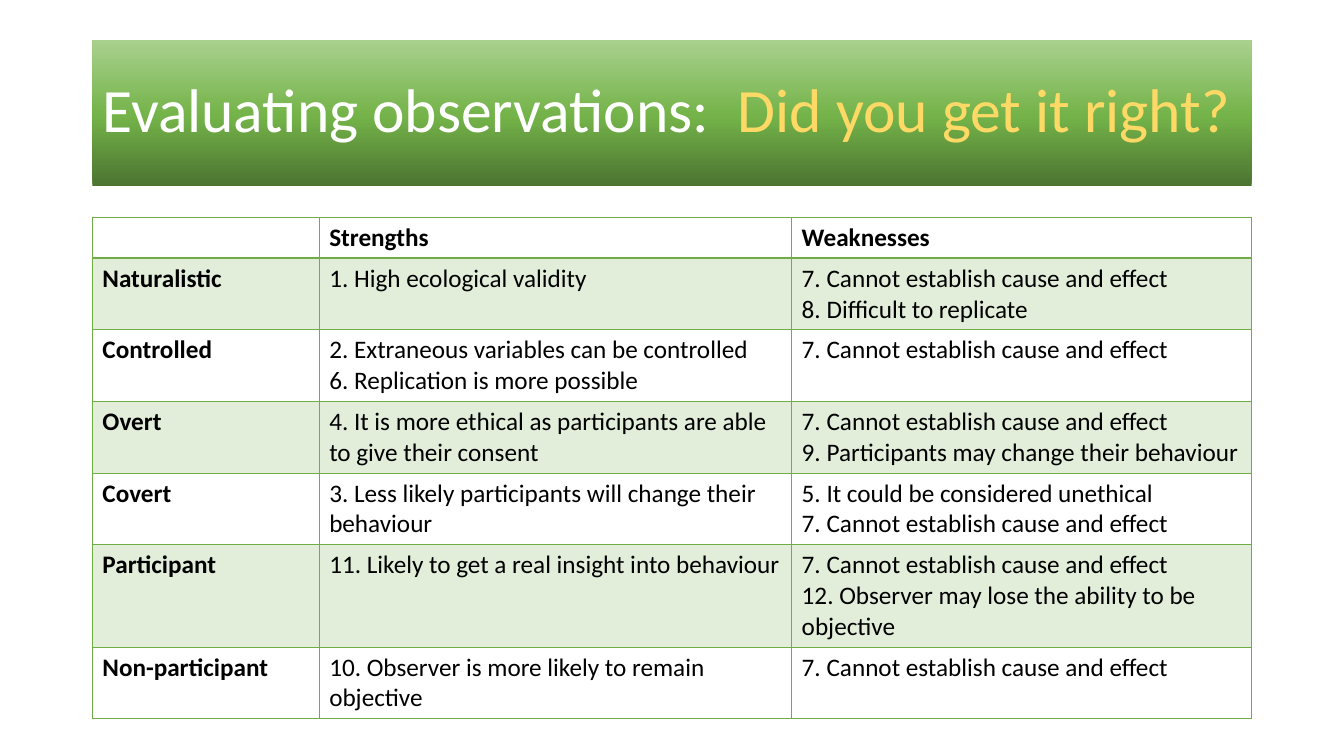
from copy import deepcopy

from lxml import etree
from pptx import Presentation
from pptx.dml.color import RGBColor
from pptx.enum.text import MSO_ANCHOR, MSO_AUTO_SIZE, PP_ALIGN
from pptx.oxml.ns import qn
from pptx.util import Pt

PX = 9525  # 96 px to the inch
FONT = "Calibri"
WHITE = RGBColor(0xFF, 0xFF, 0xFF)
BLACK = RGBColor(0x00, 0x00, 0x00)
YELLOW = RGBColor(0xFF, 0xD9, 0x66)
GREEN = RGBColor(0x70, 0xAD, 0x47)
BANNER_STOPS = [
    (0, RGBColor(0x4B, 0x74, 0x30)),
    (0.48, RGBColor(0x74, 0xB3, 0x49)),
    (1, RGBColor(0xA9, 0xD1, 0x8E)),
]
BAND_OPACITY = 20000

COLUMN_WIDTHS = [216, 450, 438]
FIRST_LINE, NEXT_LINE = 39, 29
NO_CAUSE = "7. Cannot establish cause and effect"
# Each row: text lines it takes, then its cells
EVALUATIONS = [
    (1, "", "Strengths", "Weaknesses"),
    (2, "Naturalistic", "1. High ecological validity",
     NO_CAUSE + "\n8. Difficult to replicate"),
    (2, "Controlled",
     "2. Extraneous variables can be controlled\n6. Replication is more possible",
     NO_CAUSE),
    (2, "Overt",
     "4. It is more ethical as participants are able to give their consent",
     NO_CAUSE + "\n9. Participants may change their behaviour"),
    (2, "Covert", "3. Less likely participants will change their behaviour",
     "5. It could be considered unethical\n" + NO_CAUSE),
    (3, "Participant", "11. Likely to get a real insight into behaviour",
     NO_CAUSE + "\n12. Observer may lose the ability to be objective"),
    (2, "Non-participant", "10. Observer is more likely to remain objective",
     NO_CAUSE),
]


def style_run(run, size, color, bold=False):
    run.font.name = FONT
    run.font.size = Pt(size)
    run.font.bold = bold
    run.font.color.rgb = color


def fill_banner(banner):
    banner.fill.gradient()
    banner.fill.gradient_angle = 90
    stop_list = banner._element.spPr.find(qn("a:gradFill")).find(qn("a:gsLst"))
    stop_list.append(deepcopy(stop_list[-1]))
    for stop, (position, color) in zip(banner.fill.gradient_stops, BANNER_STOPS):
        stop.position = position
        stop.color.rgb = color


def add_banner(slide, left, top, width, height):
    banner = slide.shapes.title
    banner.left, banner.top = left * PX, top * PX
    banner.width, banner.height = width * PX, height * PX
    fill_banner(banner)

    frame = banner.text_frame
    frame.word_wrap = True
    frame.auto_size = MSO_AUTO_SIZE.NONE
    frame.vertical_anchor = MSO_ANCHOR.MIDDLE
    heading = frame.paragraphs[0]
    heading.alignment = PP_ALIGN.LEFT
    heading.line_spacing = 0.9
    for text, color in [("Evaluating observations:", WHITE), (" ", WHITE),
                        ("Did you get it right?", YELLOW)]:
        run = heading.add_run()
        run.text = text
        style_run(run, 44, color)
        if text == " ":
            run.font._element.set("spc", "1000")  # widens the gap by 10 pt


def set_borders(cell, row):
    """Draw green borders, doubled below the header row."""
    widths = {"lnL": 1, "lnR": 1, "lnT": 2 if row == 1 else 1,
              "lnB": 2 if row == 0 else 1}
    properties = cell._tc.get_or_add_tcPr()
    for index, (side, width) in enumerate(widths.items()):
        line = etree.Element(qn("a:" + side), w=str(Pt(width)))
        solid = etree.SubElement(line, qn("a:solidFill"))
        etree.SubElement(solid, qn("a:srgbClr"), val=str(GREEN))
        properties.insert(index, line)


def fill_cell(cell, banded):
    if not banded:
        cell.fill.background()
        return
    cell.fill.solid()
    cell.fill.fore_color.rgb = GREEN
    color = cell._tc.tcPr.find(qn("a:solidFill"))[0]
    etree.SubElement(color, qn("a:alpha"), val=str(BAND_OPACITY))


def add_evaluation_table(slide, left, top):
    heights = [FIRST_LINE + NEXT_LINE * (row[0] - 1) for row in EVALUATIONS]
    table = slide.shapes.add_table(
        len(EVALUATIONS), len(COLUMN_WIDTHS), left * PX, top * PX,
        sum(COLUMN_WIDTHS) * PX, sum(heights) * PX).table
    table.horz_banding = False
    for column, width in zip(table.columns, COLUMN_WIDTHS):
        column.width = width * PX
    for r, (lines, *texts) in enumerate(EVALUATIONS):
        table.rows[r].height = heights[r] * PX
        for c, text in enumerate(texts):
            cell = table.cell(r, c)
            fill_cell(cell, banded=r % 2 == 1)
            set_borders(cell, r)
            cell.text_frame.text = text
            for paragraph in cell.text_frame.paragraphs:
                for run in paragraph.runs:
                    style_run(run, 18, BLACK, bold=r == 0 or c == 0)


def main():
    deck = Presentation()
    deck.slide_width, deck.slide_height = 1280 * PX, 720 * PX
    slide = deck.slides.add_slide(deck.slide_layouts.get_by_name("Title Only"))
    add_banner(slide, 88, 38, sum(COLUMN_WIDTHS), 139)
    add_evaluation_table(slide, 88, 207)
    deck.save("out.pptx")


if __name__ == "__main__":
    main()
